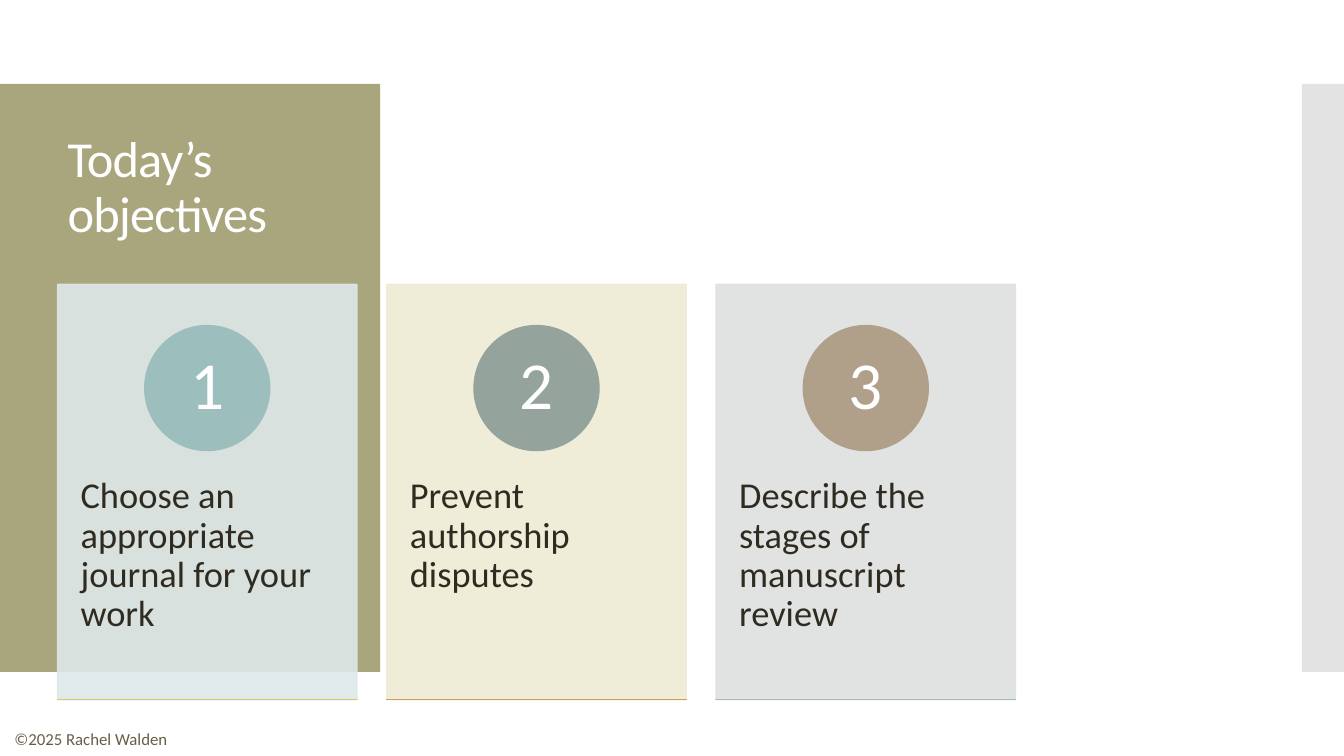
from dataclasses import dataclass
from typing import Optional

from pptx import Presentation
from pptx.dml.color import RGBColor
from pptx.enum.shapes import MSO_SHAPE as Preset
from pptx.enum.text import MSO_ANCHOR as Anchor, PP_ALIGN as Align
from pptx.oxml.ns import qn
from pptx.oxml.xmlchemy import OxmlElement
from pptx.util import Emu, Inches, Pt

# Grid of square cells: 32 columns by 18 rows
COLUMNS, ROWS = 32, 18
CELL = Inches(13.333) / COLUMNS


@dataclass(frozen=True)
class Theme:
    font: str = "Calibri"
    white: str = "FFFFFF"
    ink: str = "2F2B20"
    credit: str = "675E47"
    panel: str = "A9A57C"
    strip: str = "C8C8C8"
    title_size: int = 36
    number_size: int = 48
    body_size: int = 26
    credit_size: int = 12
    outline: float = 0.85
    line_spacing: float = 0.9
    title_tracking: float = -0.6


@dataclass(frozen=True)
class Box:
    """A place on the grid, in cells."""
    left: float
    top: float
    width: float
    height: float

    def emu(self) -> list[Emu]:
        return [Emu(round(cells * CELL))
                for cells in (self.left, self.top, self.width, self.height)]


@dataclass(frozen=True)
class TextStyle:
    size: int
    color: str
    align: Align = Align.LEFT
    anchor: Anchor = Anchor.TOP
    inset: tuple[float, float] = (0.24, 0.12)
    spacing: Optional[float] = None
    tracking: Optional[float] = None


@dataclass(frozen=True)
class Objective:
    text: str
    card: str
    badge: str
    rule: str


THEME = Theme()
TITLE = TextStyle(THEME.title_size, THEME.white, anchor=Anchor.MIDDLE,
                  spacing=THEME.line_spacing, tracking=THEME.title_tracking)
NUMBER = TextStyle(THEME.number_size, THEME.white, Align.CENTER, Anchor.MIDDLE,
                   (0.24, 0.02), THEME.line_spacing)
BODY = TextStyle(THEME.body_size, THEME.ink, inset=(0.55, 0.86),
                 spacing=THEME.line_spacing)
CREDIT = TextStyle(THEME.credit_size, THEME.credit)

OBJECTIVES = [
    Objective("Choose an appropriate journal for your work",
              "DEE8E8", "9CBEBD", "D2CB6C"),
    Objective("Prevent authorship disputes", "EEECD4", "95A39D", "C89F5D"),
    Objective("Describe the stages of manuscript review",
              "DDE0DF", "B1A089", "9CBEBD"),
]

# Card layout, in cells
FIRST_CARD = Box(1.37, 6.77, 7.13, 9.89)
CARD_PITCH = 7.84
BADGE_TOP, BADGE_SIZE = 7.75, 2.98
NUMBER_SIZE = 2.09
BODY_TOP, BODY_HEIGHT = 10.51, 5.93


def set_opacity(shape, percent: int) -> None:
    for color in shape._element.spPr.iter(qn("a:srgbClr")):
        alpha = OxmlElement("a:alpha")
        alpha.set("val", str(percent * 1000))
        color.append(alpha)


def add_block(page, box: Box, color: str, preset: Preset = Preset.RECTANGLE,
              outlined: bool = False, opacity: int = 100) -> None:
    shape = page.shapes.add_shape(preset, *box.emu())
    shape.shadow.inherit = False
    shape.fill.solid()
    shape.fill.fore_color.rgb = RGBColor.from_string(color)
    if outlined:
        shape.line.color.rgb = RGBColor.from_string(color)
        shape.line.width = Pt(THEME.outline)
    else:
        shape.line.fill.background()
    if opacity < 100:
        set_opacity(shape, opacity)


def add_text(page, box: Box, text: str, style: TextStyle) -> None:
    frame = page.shapes.add_textbox(*box.emu()).text_frame
    frame.word_wrap = True
    frame.vertical_anchor = style.anchor
    across, down = (Emu(round(cells * CELL)) for cells in style.inset)
    frame.margin_left = frame.margin_right = across
    frame.margin_top = frame.margin_bottom = down
    frame.text = text
    para = frame.paragraphs[0]
    para.alignment = style.align
    para.line_spacing = style.spacing
    for span in para.runs:
        span.font.name = THEME.font
        span.font.size = Pt(style.size)
        span.font.color.rgb = RGBColor.from_string(style.color)
        if style.tracking is not None:
            span.font._element.set("spc", str(round(style.tracking * 100)))


def add_objective(page, index: int, objective: Objective) -> None:
    left = FIRST_CARD.left + index * CARD_PITCH
    top, width, height = FIRST_CARD.top, FIRST_CARD.width, FIRST_CARD.height
    center = left + width / 2
    badge = Box(center - BADGE_SIZE / 2, BADGE_TOP, BADGE_SIZE, BADGE_SIZE)
    margin = (BADGE_SIZE - NUMBER_SIZE) / 2
    number = Box(badge.left + margin, badge.top + margin,
                 NUMBER_SIZE, NUMBER_SIZE)

    add_block(page, Box(left, top, width, height), objective.card,
              outlined=True, opacity=90)
    add_text(page, Box(left, BODY_TOP, width, BODY_HEIGHT),
             objective.text, BODY)
    add_block(page, badge, objective.badge, Preset.OVAL, outlined=True)
    add_text(page, number, str(index + 1), NUMBER)
    add_block(page, Box(left, top + height, width, 0), objective.rule,
              outlined=True)


def main() -> None:
    deck = Presentation()
    deck.slide_width = Emu(round(COLUMNS * CELL))
    deck.slide_height = Emu(round(ROWS * CELL))
    page = deck.slides.add_slide(deck.slide_layouts[6])

    # Side panels and title
    add_block(page, Box(0, 2, 9.05, 14), THEME.panel)
    add_block(page, Box(31, 2, 1, 14), THEME.strip, opacity=50)
    add_text(page, Box(1.37, 2.57, 22.8, 3.84), "Today’s \vobjectives", TITLE)

    # Numbered cards
    for index, objective in enumerate(OBJECTIVES):
        add_objective(page, index, objective)

    # Credit line
    add_text(page, Box(0.1, 17.23, 4.13, 0.72), "©2025 Rachel Walden", CREDIT)

    deck.save("out.pptx")


if __name__ == "__main__":
    main()
